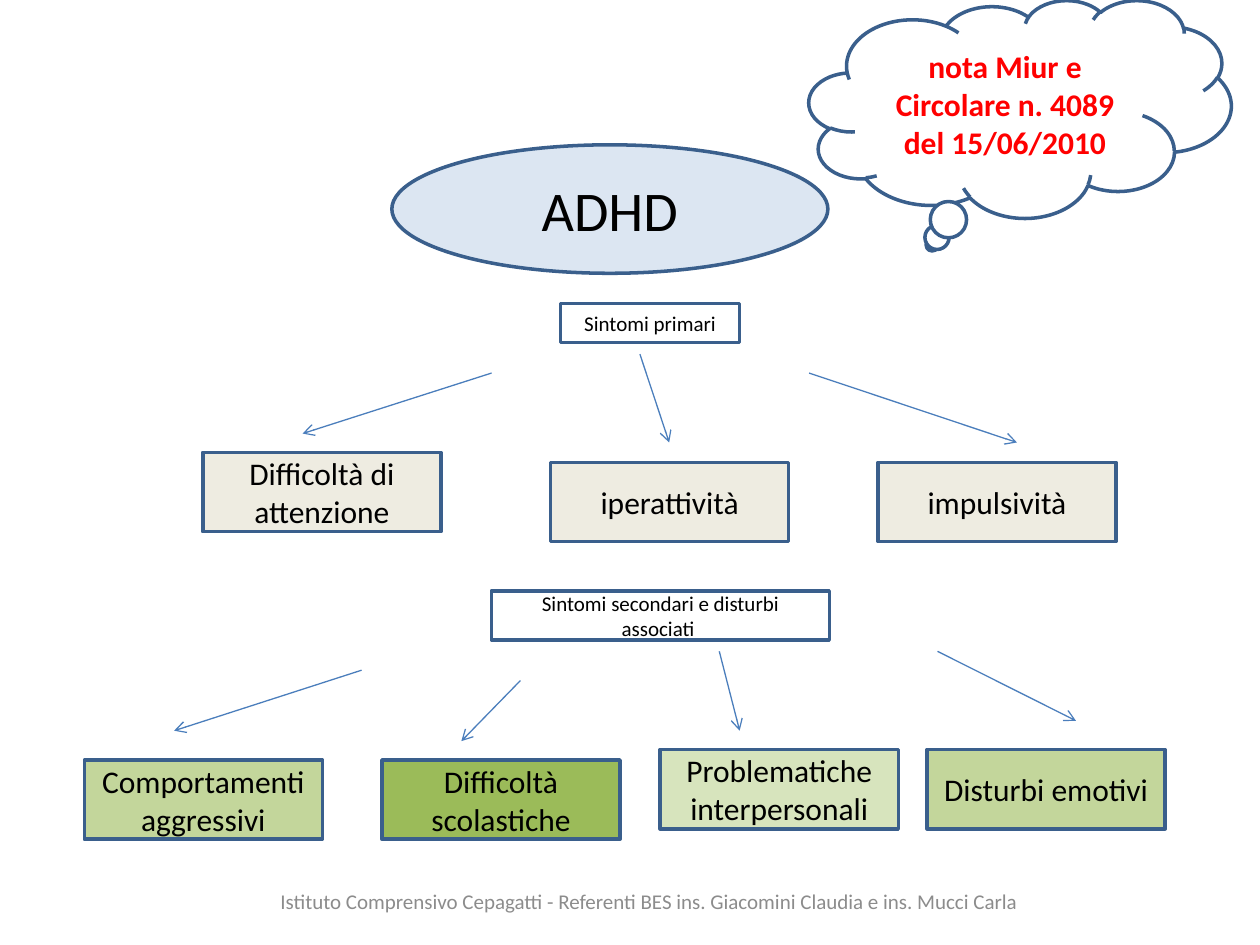
from dataclasses import dataclass

from lxml.etree import SubElement
from pptx import Presentation
from pptx.dml.color import RGBColor
from pptx.enum.shapes import MSO_CONNECTOR, MSO_SHAPE
from pptx.enum.text import MSO_ANCHOR, PP_ALIGN
from pptx.oxml.ns import qn
from pptx.util import Cm, Pt


@dataclass(frozen=True)
class Theme:
    font: str = "Calibri"
    title: int = 32
    body: int = 18
    small: int = 12
    text: str = "000000"
    alert: str = "FF0000"
    footer: str = "8C8C8C"
    outline: str = "3A5F8C"
    arrow: str = "4B7EBC"
    white: str = "FFFFFF"
    topic: str = "DCE6F2"
    primary: str = "EEECE1"
    green: str = "C3D69B"
    dark_green: str = "9BBB59"
    light_green: str = "D7E4BD"


THEME = Theme()
SYMPTOM_W, SYMPTOM_H = 4.8, 1.6

# text, left, top, fill
SYMPTOMS = [
    ("Difficoltà di attenzione", 4.09, 9.12, THEME.primary),
    ("iperattività", 11.1, 9.32, THEME.primary),
    ("impulsività", 17.7, 9.32, THEME.primary),
    ("Comportamenti aggressivi", 1.7, 15.32, THEME.green),
    ("Difficoltà scolastiche", 7.7, 15.32, THEME.dark_green),
    ("Problematiche interpersonali", 13.31, 15.11, THEME.light_green),
    ("Disturbi emotivi", 18.69, 15.11, THEME.green),
]

# start x, start y, end x, end y
ARROWS = [
    (9.91, 7.52, 6.1, 8.74),
    (12.9, 7.14, 13.49, 8.92),
    (16.31, 7.52, 20.5, 8.92),
    (7.29, 13.51, 3.51, 14.73),
    (10.49, 13.72, 9.3, 14.94),
    (14.5, 13.13, 14.91, 14.73),
    (18.9, 13.13, 21.69, 14.53),
]


def rgb(value):
    return RGBColor.from_string(value)


def write_text(sp, text, size=THEME.body, color=THEME.text, bold=False):
    tf = sp.text_frame
    tf.word_wrap = True
    tf.vertical_anchor = MSO_ANCHOR.MIDDLE
    p = tf.paragraphs[0]
    p.alignment = PP_ALIGN.CENTER
    r = p.add_run()
    r.text = text
    r.font.name = THEME.font
    r.font.size = Pt(size)
    r.font.bold = bold
    r.font.color.rgb = rgb(color)


def add_box(s, text, left, top, width, height, kind=MSO_SHAPE.RECTANGLE,
            fill=None, **text_format):
    """Add an outlined preset shape with centred text; no fill means hollow."""
    sp = s.shapes.add_shape(kind, Cm(left), Cm(top), Cm(width), Cm(height))
    sp.shadow.inherit = False
    if fill:
        sp.fill.solid()
        sp.fill.fore_color.rgb = rgb(fill)
    else:
        sp.fill.background()
    sp.line.color.rgb = rgb(THEME.outline)
    sp.line.width = Pt(2)
    write_text(sp, text, **text_format)


def add_arrow(s, x1, y1, x2, y2):
    sp = s.shapes.add_connector(MSO_CONNECTOR.STRAIGHT,
                                Cm(x1), Cm(y1), Cm(x2), Cm(y2))
    sp.line.color.rgb = rgb(THEME.arrow)
    sp.line.width = Pt(0.75)
    SubElement(sp.line._get_or_add_ln(), qn("a:tailEnd"), type="arrow")
    SubElement(sp._element.spPr, qn("a:effectLst"))


def add_footer(s, text):
    sp = s.shapes.add_textbox(Cm(2.69), Cm(17.65), Cm(20.8), Cm(1.02))
    write_text(sp, text, size=THEME.small, color=THEME.footer)


def main():
    prs = Presentation()
    prs.slide_width, prs.slide_height = Cm(25.4), Cm(19.05)
    s = prs.slides.add_slide(prs.slide_layouts[6])

    add_footer(s, "Istituto Comprensivo Cepagatti - Referenti BES "
                  "ins. Giacomini Claudia e ins. Mucci Carla")
    add_box(s, "ADHD", 7.9, 2.92, 8.79, 2.59, kind=MSO_SHAPE.OVAL,
            fill=THEME.topic, size=THEME.title)
    add_box(s, "Sintomi primari", 11.3, 6.12, 3.61, 0.79, size=THEME.small)
    add_box(s, "Sintomi secondari e disturbi associati ",
            9.91, 11.91, 6.81, 0.99, size=THEME.small)
    for arrow in ARROWS:
        add_arrow(s, *arrow)
    for text, left, top, fill in SYMPTOMS:
        add_box(s, text, left, top, SYMPTOM_W, SYMPTOM_H, fill=fill)
    add_box(s, "nota Miur e Circolare n. 4089 del 15/06/2010",
            16.31, 0, 8.51, 4.39, kind=MSO_SHAPE.CLOUD_CALLOUT,
            fill=THEME.white, color=THEME.alert, bold=True)

    prs.save("out.pptx")


if __name__ == "__main__":
    main()
